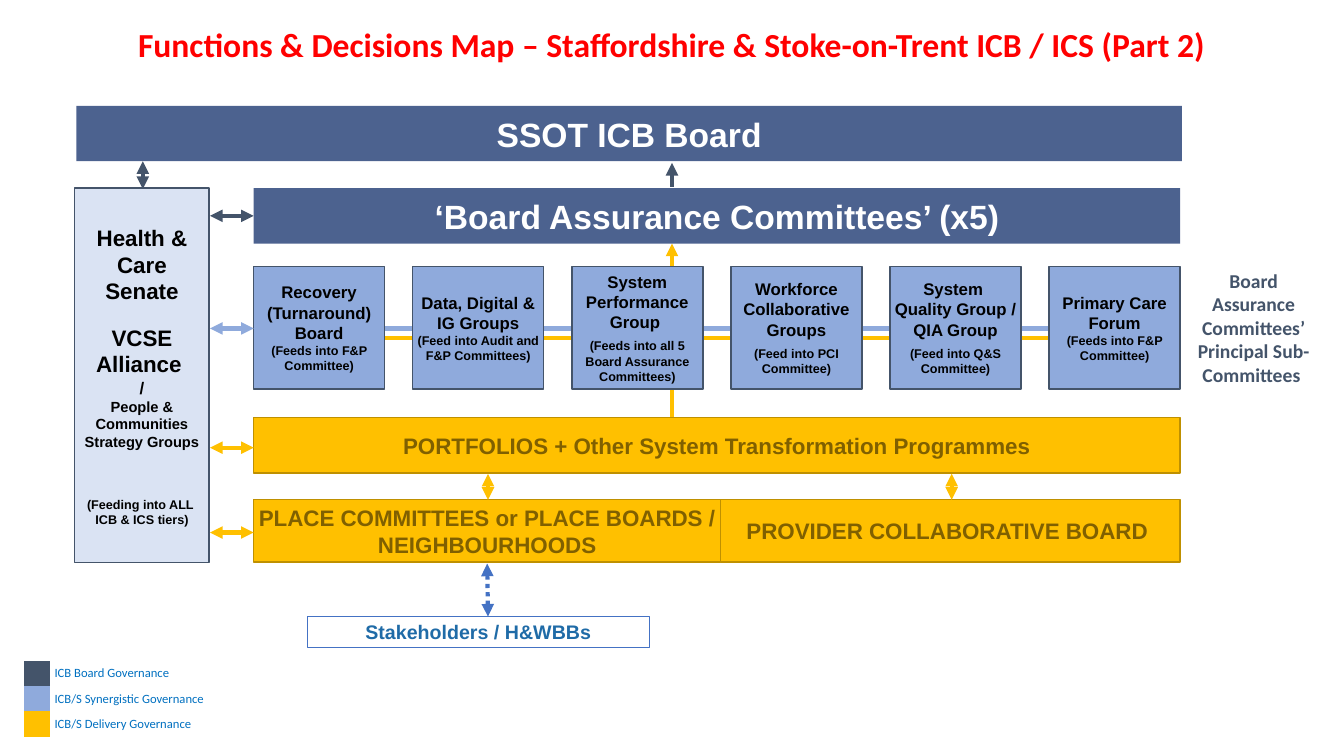
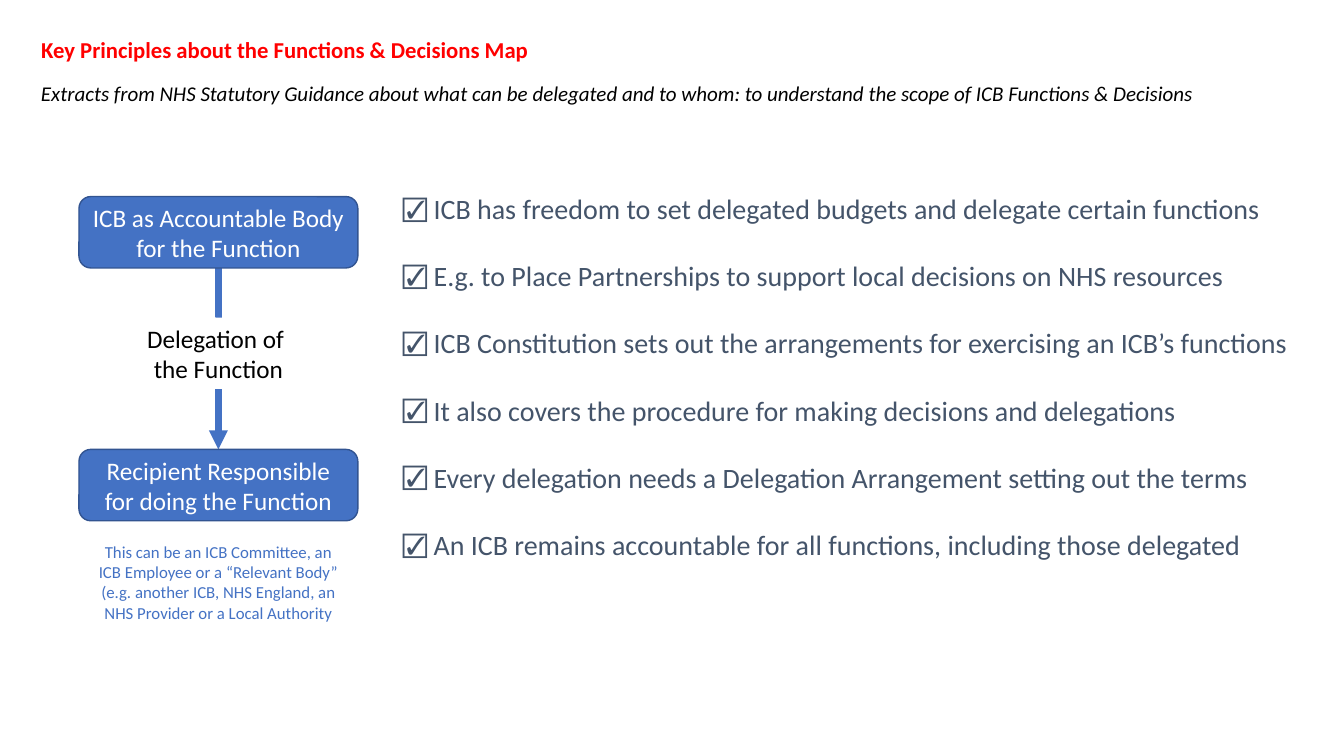
"""Build two slides: a governance map and the principles of delegation."""
from dataclasses import dataclass
from typing import NamedTuple

from lxml.etree import SubElement
from pptx import Presentation
from pptx.dml.color import RGBColor
from pptx.enum.dml import MSO_LINE
from pptx.enum.shapes import MSO_CONNECTOR, MSO_SHAPE
from pptx.enum.text import MSO_ANCHOR as Anchor, MSO_AUTO_SIZE, PP_ALIGN as Align
from pptx.oxml.ns import qn
from pptx.util import Inches, Pt

COLUMNS, ROWS = 160, 90
CELL = Inches(7.5) / ROWS
NO_GRID_STYLE = "{2D5ABB26-0587-4C30-8999-92F81FD0307C}"


@dataclass(frozen=True)
class Theme:
    """Colours, fonts and type sizes."""

    red: str = "FF0000"
    black: str = "000000"
    white: str = "FFFFFF"
    navy: str = "002060"
    slate: str = "44546A"
    periwinkle: str = "8FAADC"
    pale: str = "DAE3F3"
    amber: str = "FFC000"
    amber_edge: str = "BF9000"
    brown: str = "806000"
    blue: str = "4472C4"
    blue_edge: str = "325491"
    link: str = "1F6BA7"
    legend: str = "0070C0"
    map_font: str = "Arial"
    text_font: str = "Calibri"
    banner: float = 24
    tier: float = 16
    label: float = 14
    committee: float = 12
    group: float = 10.5
    small: float = 9
    heading: float = 16.2
    subtitle: float = 15
    step: float = 18
    principle: float = 20


THEME = Theme()


class Box(NamedTuple):
    """Left, top, width and height in grid cells."""

    left: float
    top: float
    width: float
    height: float

    def emu(self) -> list[int]:
        return [cells(value) for value in self]


class Line(NamedTuple):
    """A paragraph with its own size and space before it."""

    text: str
    size: float | None = None
    before: float = 0


class Arrow(NamedTuple):
    """A line between two grid points, with ends marked by 'head' and 'tail'."""

    x1: float
    y1: float
    x2: float
    y2: float
    color: str
    ends: tuple[str, ...] = ()
    width: float = 3
    dotted: bool = False


class Committee(NamedTuple):
    """A sub-committee and the board committee it feeds."""

    names: tuple[str, ...]
    feeds: str
    gap: float = 0


BOTH = ("head", "tail")
TIGHT = (0.5, 0.5)
TIER_LEFT, TIER_WIDTH = 30.2, 110.3
COMMITTEE_WIDTH, COMMITTEE_TOP, COMMITTEE_HEIGHT = 15.6, 31.7, 14.6
COMMITTEES = (
    Committee(("Recovery (Turnaround) Board",), "(Feeds into F&P Committee)"),
    Committee(("Data, Digital & IG Groups",), "(Feed into Audit and F&P Committees)"),
    Committee(("System Performance Group ",), "(Feeds into all 5 Board Assurance Committees)", 4.6),
    Committee(("Workforce Collaborative Groups",), "(Feed into PCI Committee)", 4.6),
    Committee(("System ", "Quality Group / QIA Group"), "(Feed into Q&S Committee)", 4.6),
    Committee(("Primary Care Forum",), "(Feeds into F&P Committee)"),
)
SENATE = (
    Line("Health & Care Senate"),
    Line("VCSE Alliance ", before=13.8),
    Line("/", THEME.committee),
    Line("People & Communities Strategy Groups", THEME.group),
    Line("(Feeding into ALL ", THEME.small, 33),
    Line("ICB & ICS tiers)", THEME.small),
)
BACK_LINES = (
    Arrow(45.7, 40.2, 135.5, 40.2, THEME.amber),
    Arrow(80, 29, 80, 49.7, THEME.amber, ("head",)),
    Arrow(45.7, 39.1, 124.9, 39.1, THEME.periwinkle),
)
SENATE_LINKS = (
    (25.7, THEME.slate),
    (39.1, THEME.periwinkle),
    (53.3, THEME.amber),
    (63.4, THEME.amber),
)
FRONT_ARROWS = (
    *(Arrow(TIER_LEFT, y, 25, y, color, BOTH) for y, color in SENATE_LINKS),
    *(Arrow(x, 56.4, x, 59.5, THEME.amber, BOTH) for x in (58.1, 113.3)),
    Arrow(17, 19.2, 17, 22.5, THEME.slate, BOTH),
    Arrow(80, 19.4, 80, 22.3, THEME.slate, ("head",)),
    Arrow(58, 67.1, 58.1, 73.4, THEME.blue, BOTH, dotted=True),
)
LEGEND = (
    (THEME.slate, "ICB Board Governance"),
    (THEME.periwinkle, "ICB/S Synergistic Governance"),
    (THEME.amber, "ICB/S Delivery Governance"),
)
PRINCIPLES = (
    "ICB has freedom to set delegated budgets and delegate certain functions",
    "E.g. to Place Partnerships to support local decisions on NHS resources",
    "ICB Constitution sets out the arrangements for exercising an ICB’s functions",
    "It also covers the procedure for making decisions and delegations",
    "Every delegation needs a Delegation Arrangement setting out the terms",
    "An ICB remains accountable for all functions, including those delegated",
)


def cells(count: float) -> int:
    """Convert grid cells to EMU."""
    return round(count * CELL)


def rgb(color: str) -> RGBColor:
    """Read a hexadecimal colour."""
    return RGBColor.from_string(color)


def write(frame, lines, *, size, color=THEME.black, font=THEME.map_font, bold=False, italic=False,
          align=Align.CENTER, anchor=Anchor.MIDDLE, insets=(1.2, 0.6), spacing=None, after=0) -> None:
    """Fill a text frame with formatted paragraphs."""
    frame.word_wrap, frame.auto_size = True, MSO_AUTO_SIZE.NONE
    frame.vertical_anchor = anchor
    frame.margin_left = frame.margin_right = cells(insets[0])
    frame.margin_top = frame.margin_bottom = cells(insets[1])
    for index, line in enumerate([Line(lines)] if isinstance(lines, str) else lines):
        paragraph = frame.add_paragraph() if index else frame.paragraphs[0]
        paragraph.alignment, paragraph.line_spacing = align, spacing
        paragraph.space_before, paragraph.space_after = Pt(line.before), Pt(after)
        run = paragraph.add_run()
        run.text = line.text
        run.font.name, run.font.size = font, Pt(line.size or size)
        run.font.bold, run.font.italic = bold, italic
        run.font.color.rgb = rgb(color)


def add_block(slide, box: Box, lines, *, fill, edge=None, alpha=None, rounded=False, **style) -> None:
    """Draw a filled block with text."""
    kind = MSO_SHAPE.ROUNDED_RECTANGLE if rounded else MSO_SHAPE.RECTANGLE
    block = slide.shapes.add_shape(kind, *box.emu())
    block.shadow.inherit = False
    block.fill.solid()
    block.fill.fore_color.rgb = rgb(fill)
    if alpha:
        tint = block._element.spPr.find(qn("a:solidFill"))[0]
        SubElement(tint, qn("a:alpha"), val=str(alpha * 1000))
    if edge:
        block.line.color.rgb, block.line.width = rgb(edge), Pt(1)
    else:
        block.line.fill.background()
    write(block.text_frame, lines, **style)


def add_label(slide, box: Box, lines, **style) -> None:
    """Place free text."""
    write(slide.shapes.add_textbox(*box.emu()).text_frame, lines, **style)


def add_arrow(slide, arrow: Arrow) -> None:
    """Draw a connector with its arrowheads."""
    points = (arrow.x1, arrow.y1, arrow.x2, arrow.y2)
    connector = slide.shapes.add_connector(MSO_CONNECTOR.STRAIGHT, *map(cells, points))
    connector.line.color.rgb, connector.line.width = rgb(arrow.color), Pt(arrow.width)
    if arrow.dotted:
        connector.line.dash_style = MSO_LINE.ROUND_DOT
    properties = connector._element.spPr
    for end in arrow.ends:
        SubElement(properties.find(qn("a:ln")), qn(f"a:{end}End"), type="triangle")
    SubElement(properties, qn("a:effectLst"))


def add_title(slide, box: Box, text: str, **style) -> None:
    """Set the slide title in the shared style."""
    title = slide.shapes.title
    title.left, title.top, title.width, title.height = box.emu()
    write(title.text_frame, text, color=THEME.red, font=THEME.text_font, bold=True, spacing=0.9, **style)


def add_legend(slide) -> None:
    """Draw the colour key as a table."""
    box = Box(2.9, 78.7, 22.1, 9)
    table = slide.shapes.add_table(len(LEGEND), 2, *box.emu()).table
    table.first_row = table.horz_banding = False
    table._tbl.tblPr.find(qn("a:tableStyleId")).text = NO_GRID_STYLE
    table.columns[0].width, table.columns[1].width = cells(3.1), cells(19)
    for row, (color, meaning) in enumerate(LEGEND):
        swatch, caption = table.cell(row, 0), table.cell(row, 1)
        swatch.fill.solid()
        swatch.fill.fore_color.rgb = rgb(color)
        swatch.margin_top = swatch.margin_bottom = 0
        SubElement(swatch.text_frame.paragraphs[0]._p, qn("a:endParaRPr"), sz=str(THEME.small * 100))
        caption.fill.background()
        write(caption.text_frame, meaning, size=THEME.small, color=THEME.legend,
              font=THEME.text_font, align=Align.LEFT)
        caption.vertical_anchor = Anchor.MIDDLE
        caption.margin_left = caption.margin_right = cells(0.5)
        caption.margin_top = caption.margin_bottom = 0


def add_checks(frame) -> None:
    """Give each paragraph a hanging check mark."""
    for paragraph in frame.paragraphs:
        properties = paragraph._p.get_or_add_pPr()
        properties.set("marL", str(Inches(0.31)))
        properties.set("indent", str(-Inches(0.31)))
        SubElement(properties, qn("a:buSzPct"), val="90000")
        SubElement(properties, qn("a:buChar"), char="☑")


def build_map(slide) -> None:
    """Draw the governance map."""
    add_title(slide, Box(8.9, 2.9, 142.1, 5.2), "Functions & Decisions Map – Staffordshire & Stoke-on-Trent ICB / ICS (Part 2)",
              size=THEME.banner, insets=TIGHT)
    for arrow in BACK_LINES:
        add_arrow(slide, arrow)
    for box, text in ((Box(9.1, 12.6, 131.6, 6.6), "SSOT ICB Board"),
                      (Box(TIER_LEFT, 22.4, TIER_WIDTH, 6.6), "‘Board Assurance Committees’ (x5)")):
        add_block(slide, box, text, fill=THEME.navy, alpha=70, size=THEME.banner, color=THEME.white, bold=True)
    for box, text in ((Box(TIER_LEFT, 49.7, TIER_WIDTH, 6.6), "PORTFOLIOS + Other System Transformation Programmes"),
                      (Box(TIER_LEFT, 59.5, 55.6, 7.4), "PLACE COMMITTEES or PLACE BOARDS / NEIGHBOURHOODS"),
                      (Box(85.8, 59.5, 54.7, 7.4), "PROVIDER COLLABORATIVE BOARD ")):
        add_block(slide, box, text, fill=THEME.amber, edge=THEME.amber_edge, size=THEME.tier,
                  color=THEME.brown, bold=True, insets=TIGHT)
    pitch = (TIER_WIDTH - COMMITTEE_WIDTH) / (len(COMMITTEES) - 1)
    for index, committee in enumerate(COMMITTEES):
        box = Box(TIER_LEFT + index * pitch, COMMITTEE_TOP, COMMITTEE_WIDTH, COMMITTEE_HEIGHT)
        lines = [*map(Line, committee.names), Line(committee.feeds, THEME.small, committee.gap)]
        add_block(slide, box, lines, fill=THEME.periwinkle, edge=THEME.slate, size=THEME.committee,
                  bold=True, insets=(0, 0.5))
    add_block(slide, Box(8.9, 22.4, 16, 44.6), SENATE, fill=THEME.pale, edge=THEME.slate,
              size=THEME.tier, bold=True, insets=TIGHT)
    add_block(slide, Box(36.6, 73.4, 40.7, 3.7), "Stakeholders / H&WBBs", fill=THEME.white, edge=THEME.blue,
              size=THEME.label, color=THEME.link, bold=True)
    for arrow in FRONT_ARROWS:
        add_arrow(slide, arrow)
    add_label(slide, Box(140.6, 31.4, 17.3, 15.4), "Board Assurance Committees’ Principal Sub-Committees ",
              size=THEME.label, color=THEME.slate, font=THEME.text_font, bold=True, anchor=Anchor.TOP)
    add_legend(slide)


def build_principles(slide) -> None:
    """Draw the delegation flow and its principles."""
    add_title(slide, Box(3.7, 4, 65.8, 4.1), "Key Principles about the Functions & Decisions Map",
              size=THEME.heading, align=Align.LEFT)
    add_label(slide, Box(3.7, 9, 150, 4.2), "Extracts from NHS Statutory Guidance about what can be delegated and to whom: "
              "to understand the scope of ICB Functions & Decisions", size=THEME.subtitle,
              font=THEME.text_font, italic=True, align=Align.LEFT, anchor=Anchor.TOP)
    add_arrow(slide, Arrow(26, 31.9, 26, 53.5, THEME.blue, ("tail",), 4.5))
    solid = dict(fill=THEME.blue, edge=THEME.blue_edge, color=THEME.white, size=THEME.step)
    plain = dict(fill=THEME.white, color=THEME.black, size=THEME.step)
    note = dict(fill=THEME.white, color=THEME.blue, size=THEME.committee)
    for top, height, lines, style in (
        (23.4, 8.5, "ICB as Accountable Body for the Function", solid),
        (37.8, 8.5, (Line("Delegation of "), Line("the Function")), plain),
        (53.5, 8.5, "Recipient Responsible for doing the Function", solid),
        (63.4, 11.8, "This can be an ICB Committee, an ICB Employee or a “Relevant Body” "
                     "(e.g. another ICB, NHS England, an NHS Provider or a Local Authority", note),
    ):
        add_block(slide, Box(9.4, top, 33.2, height), lines, rounded=True, font=THEME.text_font, **style)
    body = slide.placeholders[1]
    body.left, body.top, body.width, body.height = Box(46.7, 22.2, 109.4, 45.6).emu()
    write(body.text_frame, [Line(text) for text in PRINCIPLES], size=THEME.principle, color=THEME.slate,
          font=THEME.text_font, align=Align.LEFT, anchor=Anchor.TOP, after=24)
    add_checks(body.text_frame)


def main() -> None:
    """Build and save the presentation."""
    deck = Presentation()
    deck.slide_width, deck.slide_height = cells(COLUMNS), cells(ROWS)
    build_map(deck.slides.add_slide(deck.slide_layouts[5]))
    build_principles(deck.slides.add_slide(deck.slide_layouts[1]))
    deck.save("out.pptx")


if __name__ == "__main__":
    main()
